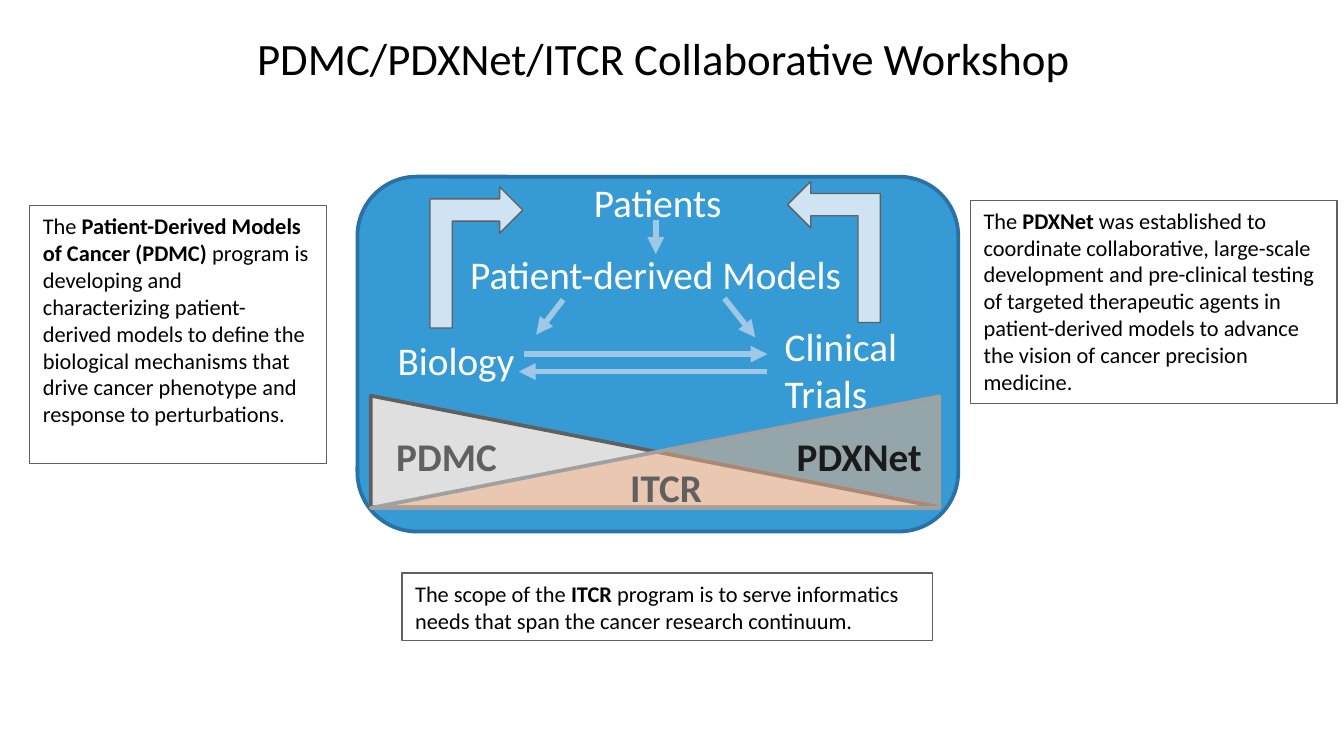
import pptx
import pptx.util
import pptx.dml.color
import pptx.enum.shapes
import pptx.enum.text
import pptx.oxml
import pptx.oxml.ns

RGB = pptx.dml.color.RGBColor
KIND = pptx.enum.shapes.MSO_SHAPE
FIT = pptx.enum.text.MSO_AUTO_SIZE
Pt = pptx.util.Pt

WHITE = RGB(0xFF, 0xFF, 0xFF)
BLACK = RGB(0, 0, 0)
INK = RGB(0x1A, 0x1A, 0x1A)
BLUE = RGB(0x36, 0x9B, 0xD5)
NAVY = RGB(0x2A, 0x71, 0xA5)
SKY = RGB(0x9E, 0xC8, 0xE6)
PALE = RGB(0xCF, 0xE3, 0xF3)
GREY = RGB(0x60, 0x60, 0x60)
SILVER = RGB(0xA0, 0xA0, 0xA0)
LIGHT = RGB(0xDF, 0xDF, 0xDF)
PEACH = RGB(0xF4, 0xB1, 0x83)
PX = 4572  # EMU in one px, 200 px to the inch

deck = pptx.Presentation()
deck.slide_width, deck.slide_height = 2000 * PX, 1125 * PX
slide = deck.slides.add_slide(deck.slide_layouts[5])
shapes = slide.shapes


def draw(kind, box, fill, line, width):
    shape = shapes.add_shape(kind, *[n * PX for n in box])
    shape.shadow.inherit = False
    if fill is None:
        shape.fill.background()
    else:
        shape.fill.solid()
        shape.fill.fore_color.rgb = fill
    shape.line.color.rgb = line
    shape.line.width = Pt(width)
    return shape


def style(run, size, color, bold=False):
    run.font.name = "Calibri"
    run.font.size = Pt(size)
    run.font.color.rgb = color
    run.font.bold = bold


# Title
title = shapes.title
title.left, title.top, title.width, title.height = [n * PX for n in (357, 36, 1260, 100)]
frame = title.text_frame
frame.text = "PDMC/PDXNet/ITCR Collaborative Workshop"
frame.word_wrap = False
frame.auto_size = FIT.SHAPE_TO_FIT_TEXT
frame.vertical_anchor = pptx.enum.text.MSO_ANCHOR.TOP
style(frame.paragraphs[0].runs[0], 24, BLACK)

# Blue panel
draw(KIND.ROUNDED_RECTANGLE, (532, 263, 894, 528), BLUE, NAVY, 2)

# Labels: those of the cycle lie below the wedges, those of the programs above
cycle = [
    ("Patient-derived Models", (680, 363, 600, 90), WHITE, False),
    ("Biology", (572, 491, 216, 90), WHITE, False),
    ("Clinical\nTrials", (1148, 470, 210, 162), WHITE, False),
    ("Patients", (864, 256, 232, 90), WHITE, False),
]
teams = [
    ("PDXNet", (1166, 634, 228, 90), INK, True),
    ("PDMC", (570, 634, 192, 90), GREY, True),
    ("ITCR", (918, 680, 148, 90), GREY, True),
]
for group in (cycle, teams):
    if group is teams:
        # Wedges
        draw(KIND.RIGHT_TRIANGLE, (552, 589, 846, 166), LIGHT, GREY, 2)
        wedge = draw(KIND.RIGHT_TRIANGLE, (552, 590, 846, 166), PEACH, SILVER, 2)
        wedge._element.spPr.get_or_add_xfrm().set("flipH", "1")
        tint = wedge._element.spPr.find(".//" + pptx.oxml.ns.qn("a:srgbClr"))
        tint.append(pptx.oxml.parse_xml(
            '<a:alpha %s val="50000"/>' % pptx.oxml.ns.nsdecls("a")))
    for text, box, color, bold in group:
        frame = shapes.add_textbox(*[n * PX for n in box]).text_frame
        frame.text = text
        frame.word_wrap = False
        frame.auto_size = FIT.SHAPE_TO_FIT_TEXT
        for para in frame.paragraphs:
            style(para.runs[0], 21, color, bold)

    if group is cycle:
        # Thin arrows between the labels
        for ends in [(838, 446, 798, 498), (1078, 444, 1124, 502),
                     (780, 527, 1142, 527), (1142, 553, 772, 553),
                     (976, 328, 976, 378)]:
            link = shapes.add_connector(
                pptx.enum.shapes.MSO_CONNECTOR.STRAIGHT, *[n * PX for n in ends])
            link.line.color.rgb = SKY
            link.line.width = Pt(3)
            for tag, host in (("tailEnd", link.line._get_or_add_ln()),
                              ("effectLst", link._element.spPr)):
                part = pptx.oxml.parse_xml(
                    "<a:%s %s/>" % (tag, pptx.oxml.ns.nsdecls("a")))
                if tag == "tailEnd":
                    part.set("type", "triangle")
                host.append(part)

# Notes on the three programs; every second part is bold
notes = [
    ((598, 853, 790, 100),
     ["The scope of the ", "ITCR",
      " program is to serve informatics needs that span the cancer "
      "research continuum."]),
    ((1444, 298, 546, 303),
     ["The ", "PDXNet",
      " was established to coordinate collaborative, large-scale development "
      "and pre-clinical testing of targeted therapeutic agents in "
      "patient-derived models to advance the vision of cancer precision "
      "medicine."]),
    ((44, 306, 442, 384),
     ["The ", "Patient-Derived Models of Cancer (PDMC) ",
      "program is developing and characterizing patient-derived models to "
      "define the biological mechanisms that drive cancer phenotype and "
      "response to perturbations. "]),
]
for box, parts in notes:
    frame = draw(KIND.RECTANGLE, box, None, GREY, 0.75).text_frame
    frame.word_wrap = True
    frame.vertical_anchor = pptx.enum.text.MSO_ANCHOR.TOP
    para = frame.paragraphs[0]
    para.alignment = pptx.enum.text.PP_ALIGN.LEFT
    for i, part in enumerate(parts):
        run = para.add_run()
        run.text = part
        style(run, 12, BLACK, i == 1)

# Bent arrows back to the patients
for left, top, turn in ((1136, 306, 270), (604, 314, 90)):
    bend = draw(KIND.BENT_UP_ARROW, (left, top, 210, 138), PALE, GREY, 0.75)
    bend.adjustments[0] = 0.24
    bend.rotation = turn
    if turn == 90:
        bend._element.spPr.get_or_add_xfrm().set("flipH", "1")

deck.save("out.pptx")
